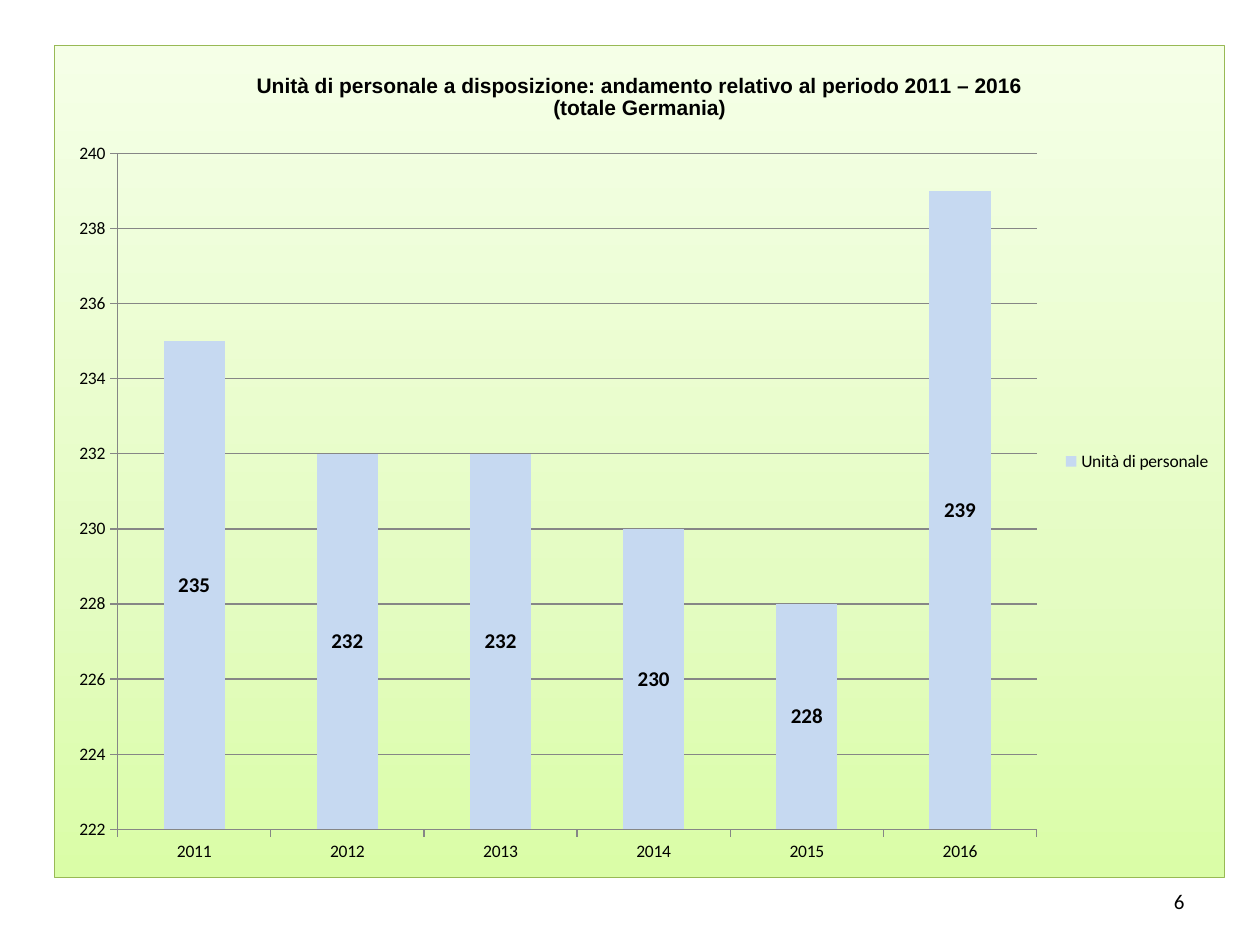
"""Build a slide with a column chart of staff units per year."""
from lxml import etree
from pptx import Presentation
from pptx import util as u
from pptx.chart.data import CategoryChartData
from pptx.dml.color import RGBColor
from pptx.enum import chart as ch, text
from pptx.oxml import parse_xml
from pptx.oxml.ns import nsdecls, qn

TITLE = ["Unità di personale a disposizione: andamento relativo al periodo 2011 – 2016",
         "(totale Germania)"]
SERIES = "Unità di personale"
STAFF = {"2011": 235, "2012": 232, "2013": 232, "2014": 230, "2015": 228, "2016": 239}
PAGE = "6"
AXIS = {"minimum_scale": 222, "maximum_scale": 240, "major_unit": 2}
GRADIENT = [(0, "DAFDA7"), (35, "E4FCC2"), (100, "F5FFE7")]
BAR, GRID, BORDER, INK = "C6D9F1", "868686", "98B955", "000000"
CHART = (54, 45, 1171, 833)
PLOT = (117, 153, 920, 677)
NUMBER = (903, 876, 294, 50)


def px(n):
    return u.Emu(round(n * 914400 / 126))


def rgb(value):
    return RGBColor.from_string(value)


def set_font(font, size, name="Calibri", color=INK, bold=False):
    font.size, font.name, font.bold = u.Pt(size), name, bold
    font.color.rgb = rgb(color)


def write(tf, lines, align=text.PP_ALIGN.CENTER, **style):
    for i, line in enumerate(lines):
        p = tf.add_paragraph() if i else tf.paragraphs[0]
        p.alignment = align
        r = p.add_run()
        r.text = line
        set_font(r.font, **style)


def set_background(chart):
    stops = "".join(f'<a:gs pos="{pos * 1000}"><a:srgbClr val="{color}"/></a:gs>'
                    for pos, color in GRADIENT)
    chart._chartSpace.find(qn("c:chart")).addnext(parse_xml(
        f'<c:spPr {nsdecls("c", "a")}><a:gradFill><a:gsLst>{stops}</a:gsLst>'
        f'<a:lin ang="16200000" scaled="1"/></a:gradFill><a:ln w="{u.Pt(0.75)}">'
        f'<a:solidFill><a:srgbClr val="{BORDER}"/></a:solidFill></a:ln></c:spPr>'))


def set_plot_layout(chart):
    area = chart._chartSpace.find(".//" + qn("c:plotArea"))
    for old in area.findall(qn("c:layout")):
        area.remove(old)
    layout = etree.Element(qn("c:layout"))
    manual = etree.SubElement(layout, qn("c:manualLayout"))
    x, y, w, h = CHART
    left, top, width, height = PLOT
    values = {"layoutTarget": "inner", "xMode": "edge", "yMode": "edge",
              "x": round((left - x) / w, 4), "y": round((top - y) / h, 4),
              "w": round(width / w, 4), "h": round(height / h, 4)}
    for tag, value in values.items():
        etree.SubElement(manual, qn("c:" + tag)).set("val", str(value))
    area.insert(0, layout)


def add_staff_chart(s):
    data = CategoryChartData()
    data.categories = list(STAFF)
    data.add_series(SERIES, list(STAFF.values()))
    chart = s.shapes.add_chart(ch.XL_CHART_TYPE.COLUMN_STACKED, *map(px, CHART), data).chart
    set_font(chart.font, 10)
    chart.has_title = True
    write(chart.chart_title.text_frame, TITLE, size=12, name="Arial", bold=True)
    chart.chart_title.include_in_layout = False
    chart.has_legend = True
    chart.legend.position = ch.XL_LEGEND_POSITION.RIGHT
    chart.legend.include_in_layout = False

    plot = chart.plots[0]
    plot.gap_width, plot.overlap, plot.vary_by_categories = 150, 100, False
    fill = plot.series[0].format.fill
    fill.solid()
    fill.fore_color.rgb = rgb(BAR)
    plot.has_data_labels = True
    labels = plot.data_labels
    labels.show_value = True
    labels.position = ch.XL_LABEL_POSITION.CENTER
    set_font(labels.font, 12, bold=True)

    val, cat = chart.value_axis, chart.category_axis
    for name, value in AXIS.items():
        setattr(val, name, value)
    val.has_major_gridlines = True
    for axis in (val, cat):
        axis.major_tick_mark = ch.XL_TICK_MARK.OUTSIDE
    for part in (val, cat, val.major_gridlines):
        part.format.line.color.rgb = rgb(GRID)
        part.format.line.width = u.Pt(0.75)
    set_background(chart)
    set_plot_layout(chart)


def main():
    prs = Presentation()
    prs.slide_width, prs.slide_height = px(1260), px(945)
    s = prs.slides.add_slide(prs.slide_layouts[6])
    tf = s.shapes.add_textbox(*map(px, NUMBER)).text_frame
    tf.word_wrap = True
    tf.vertical_anchor = text.MSO_ANCHOR.MIDDLE
    write(tf, [PAGE], align=text.PP_ALIGN.RIGHT, size=12)
    add_staff_chart(s)
    prs.save("out.pptx")


if __name__ == "__main__":
    main()
